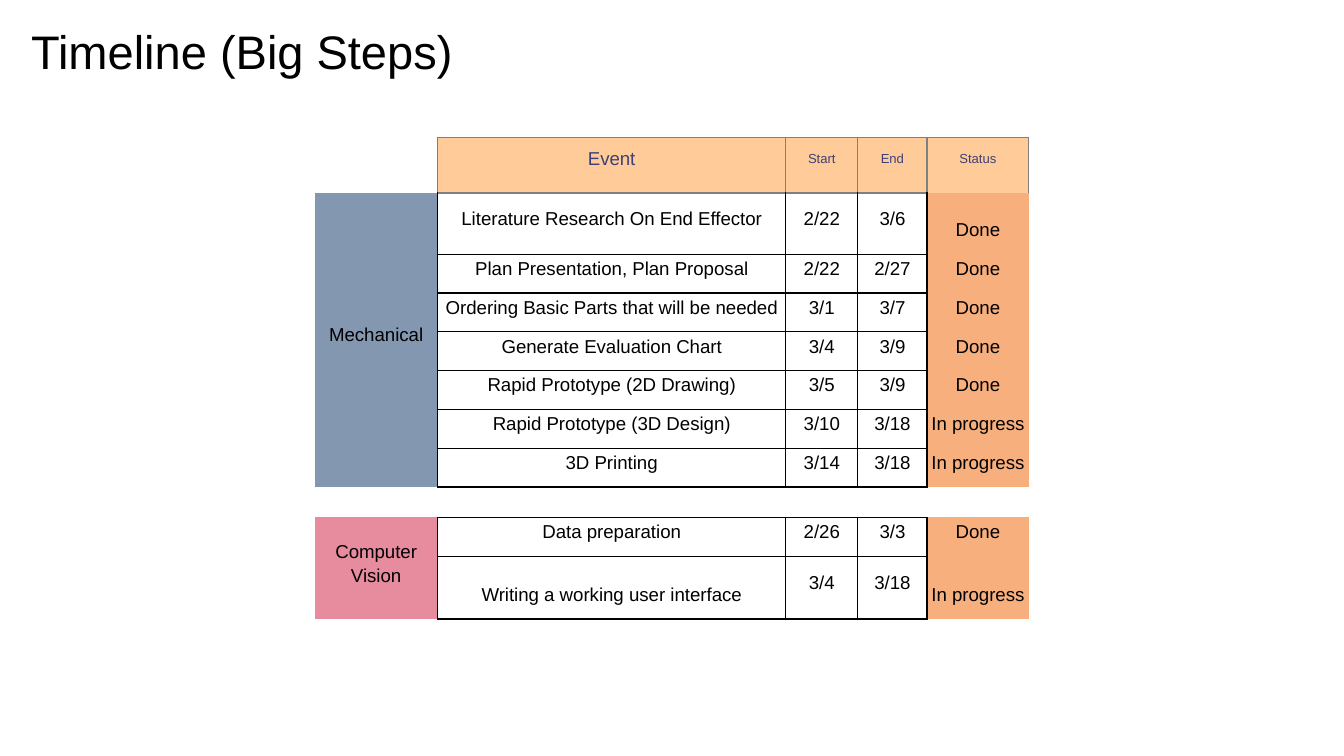
from lxml import etree
from pptx import Presentation
from pptx.dml.color import RGBColor
from pptx.enum.text import MSO_ANCHOR, MSO_AUTO_SIZE, PP_ALIGN
from pptx.oxml.ns import qn
from pptx.util import Pt

CENTER, LEFT = PP_ALIGN.CENTER, PP_ALIGN.LEFT
MIDDLE, BOTTOM = MSO_ANCHOR.MIDDLE, MSO_ANCHOR.BOTTOM
NO_AUTOFIT = MSO_AUTO_SIZE.NONE

FONT = "Arial"
BLACK, GRAY, INDIGO = "000000", "7F7F7F", "3F3F76"
PEACH, ORANGE, BLUE, PINK = "FFCC99", "F8AF7E", "8497B0", "E78B9F"
COLUMN_WIDTHS = [65.8, 186.5, 38.7, 37, 54.6]
ROW_HEIGHT = 20.8

HEADINGS = ["Event", "Start", "End", "Status"]
MECHANICAL_STEPS = [
    ("Literature Research On End Effector", "2/22", "3/6", "Done"),
    ("Plan Presentation, Plan Proposal", "2/22", "2/27", "Done"),
    ("Ordering Basic Parts that will be needed", "3/1", "3/7", "Done"),
    ("Generate Evaluation Chart", "3/4", "3/9", "Done"),
    ("Rapid Prototype (2D Drawing)", "3/5", "3/9", "Done"),
    ("Rapid Prototype (3D Design)", "3/10", "3/18", "In progress"),
    ("3D Printing", "3/14", "3/18", "In progress"),
]
VISION_STEPS = [
    ("Data preparation", "2/26", "3/3", "Done"),
    ("Writing a working user interface", "3/4", "3/18", "In progress"),
]


def rgb(value):
    return RGBColor.from_string(value)


def set_font(para, size, color):
    para.font.name = FONT
    para.font.size = Pt(size)
    para.font.color.rgb = rgb(color)


def set_borders(cell, borders):
    properties = cell._tc.get_or_add_tcPr()
    for side in "LRTB":
        line = etree.SubElement(properties, qn(f"a:ln{side}"), w=str(Pt(0.75)))
        if side in borders:
            fill = etree.SubElement(line, qn("a:solidFill"))
            etree.SubElement(fill, qn("a:srgbClr"), val=borders[side])
        else:
            etree.SubElement(line, qn("a:noFill"))


def style_cell(cell, borders, fill=None):
    set_borders(cell, borders)
    if fill:
        cell.fill.solid()
        cell.fill.fore_color.rgb = rgb(fill)
    else:
        cell.fill.background()
    cell.margin_left = cell.margin_right = cell.margin_top = Pt(0.72)
    cell.margin_bottom = Pt(7.2)


def write_cell(cell, text, size=10, color=BLACK, anchor=MIDDLE, spacing=1.15):
    cell.text = text
    cell.vertical_anchor = anchor
    para = cell.text_frame.paragraphs[0]
    para.alignment = CENTER
    para.line_spacing = spacing
    set_font(para, size, color)


def add_grid(page, left, top, heights):
    frame = page.shapes.add_table(len(heights), len(COLUMN_WIDTHS), Pt(left), Pt(top),
                                  Pt(sum(COLUMN_WIDTHS)), Pt(sum(heights)))
    table = frame.table
    table.first_row = table.horz_banding = False
    for column, width in zip(table.columns, COLUMN_WIDTHS):
        column.width = Pt(width)
    for row, height in zip(table.rows, heights):
        row.height = Pt(height)
    return table


def fill_header(table):
    style_cell(table.cell(0, 0), {"R": GRAY})
    for column, heading in enumerate(HEADINGS, 1):
        cell = table.cell(0, column)
        sides = "LTR" if heading == "Status" else "LTRB"
        style_cell(cell, dict.fromkeys(sides, GRAY), PEACH)
        write_cell(cell, heading, 10 if heading == "Event" else 7, INDIGO, spacing=1)


def fill_steps(table, first_row, group, group_color, steps, top_color, last_anchors):
    for row, step in enumerate(steps, first_row):
        style_cell(table.cell(row, 0), {"R": BLACK}, group_color)
        for column, (text, anchor) in enumerate(zip(step, last_anchors), 1):
            cell = table.cell(row, column)
            if column == len(step):
                style_cell(cell, {"L": BLACK}, ORANGE)
            else:
                borders = dict.fromkeys("LRTB", BLACK)
                if row == first_row:
                    borders["T"] = top_color
                style_cell(cell, borders)
            write_cell(cell, text, anchor=anchor)
    group_cell = table.cell(first_row, 0)
    group_cell.merge(table.cell(first_row + len(steps) - 1, 0))
    write_cell(group_cell, group)


def add_mechanical_table(page, left, top):
    heights = [28.2, 32.8] + [ROW_HEIGHT] * (len(MECHANICAL_STEPS) - 1)
    table = add_grid(page, left, top, heights)
    fill_header(table)
    fill_steps(table, 1, "Mechanical", BLUE, MECHANICAL_STEPS, GRAY,
               [MIDDLE, MIDDLE, MIDDLE, BOTTOM])


def add_vision_table(page, left, top):
    table = add_grid(page, left, top, [ROW_HEIGHT, 33.7])
    fill_steps(table, 0, "Computer Vision", PINK, VISION_STEPS, BLACK,
               [BOTTOM, MIDDLE, MIDDLE, BOTTOM])


def add_title(page, left, top, width, height):
    title = page.shapes.title
    title.left, title.top = Pt(left), Pt(top)
    title.width, title.height = Pt(width), Pt(height)
    frame = title.text_frame
    frame.text = "Timeline (Big Steps)"
    frame.auto_size = NO_AUTOFIT
    frame.vertical_anchor = MIDDLE
    frame.margin_left = frame.margin_right = Pt(7.2)
    frame.margin_top = frame.margin_bottom = Pt(7.2)
    para = frame.paragraphs[0]
    para.alignment = LEFT
    set_font(para, 25.2, BLACK)


def main():
    deck = Presentation()
    deck.slide_width, deck.slide_height = Pt(720), Pt(405)
    page = deck.slides.add_slide(deck.slide_layouts[5])
    add_title(page, 9.4, 4.3, 671, 45.4)
    add_mechanical_table(page, 168.6, 73.5)
    add_vision_table(page, 168.6, 277.2)
    deck.save("out.pptx")


if __name__ == "__main__":
    main()
